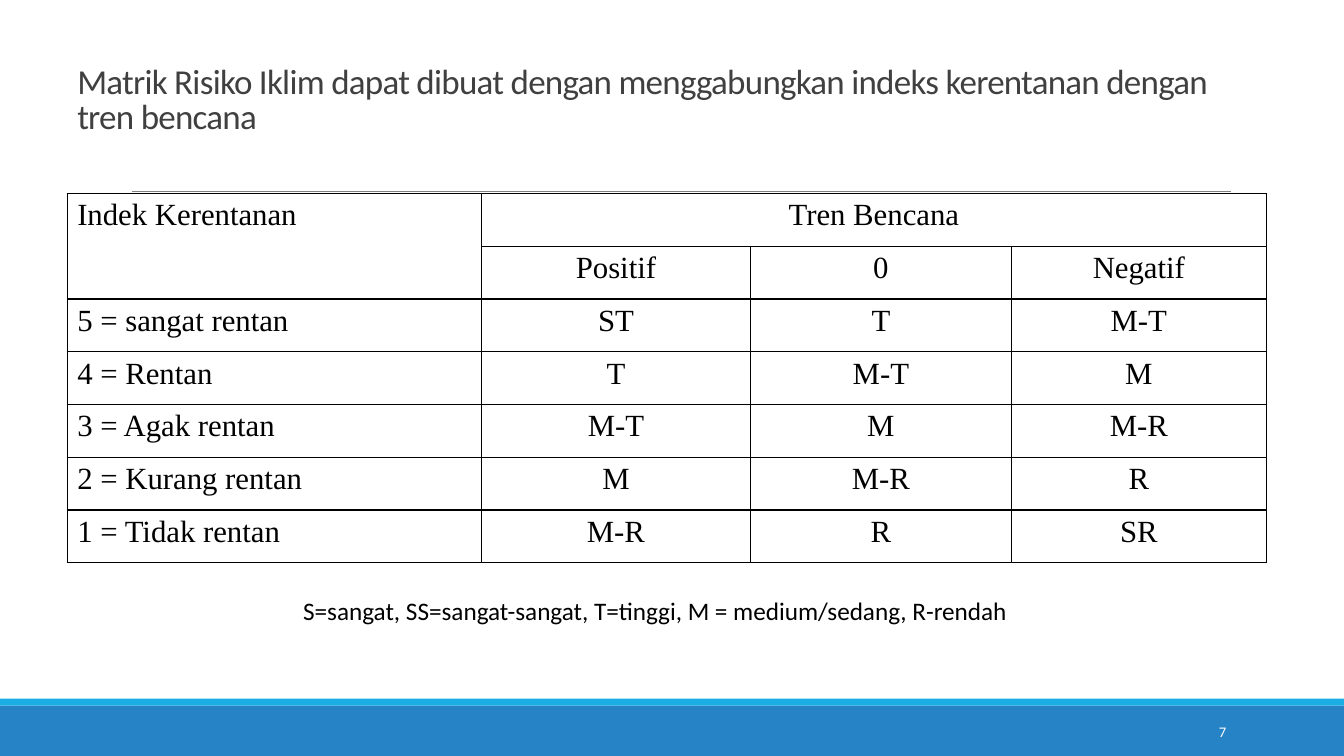
import pptx
import pptx.util
import pptx.dml.color
import pptx.enum.shapes
import pptx.enum.text
from lxml import etree

Pt = pptx.util.Pt
ALIGN = pptx.enum.text.PP_ALIGN
ANCHOR = pptx.enum.text.MSO_ANCHOR

TITLE = ("Matrik Risiko Iklim dapat dibuat dengan menggabungkan "
         "indeks kerentanan dengan tren bencana")
INDEX_HEAD = "Indek Kerentanan"
TREND_HEAD = "Tren Bencana"
TRENDS = ["Positif", "0", "Negatif"]
INDEX_LEVELS = ["5 = sangat rentan", "4 = Rentan", "3 = Agak rentan",
                "2 = Kurang rentan", "1 = Tidak rentan"]
# Risk falls one step with each row down and each column to the right.
RISKS = ["ST", "T", "M-T", "M", "M-R", "R", "SR"]
LEGEND = "S=sangat, SS=sangat-sangat, T=tinggi, M = medium/sedang, R-rendah"
PAGE = "7"

BANDS = [(504, 36, "2683C6"), (499, 5, "1CADE4")]  # top, height, colour
COL_WIDTHS = [296, 192, 186.5, 182]
ROW_HEIGHT = 37.7
SLIDE_W, SLIDE_H = 960, 540


def rgb(hex_colour):
    return pptx.dml.color.RGBColor.from_string(hex_colour)


def write(tf, text, size, font="Calibri", colour="000000", align=ALIGN.LEFT,
          anchor=ANCHOR.TOP, line_spacing=1.0, tracking=0):
    tf.word_wrap = True
    tf.vertical_anchor = anchor
    p = tf.paragraphs[0]
    p.alignment = align
    p.line_spacing = line_spacing
    r = p.add_run()
    r.text = text
    r.font.size = Pt(size)
    r.font.name = font
    r.font.color.rgb = rgb(colour)
    if tracking:
        r.font._element.set("spc", str(int(tracking * 100)))


def add_text(s, left, top, width, height, text, size, **fmt):
    box = s.shapes.add_textbox(Pt(left), Pt(top), Pt(width), Pt(height))
    write(box.text_frame, text, size, **fmt)


def add_borders(cell, colour="000000", width=1):
    """Draw all four sides; they must precede the fill in the XML."""
    tc_pr = cell._tc.get_or_add_tcPr()
    ns = pptx.oxml.ns.qn
    for i, side in enumerate(("lnL", "lnR", "lnT", "lnB")):
        ln = etree.Element(ns("a:" + side), w=str(Pt(width)))
        fill = etree.SubElement(ln, ns("a:solidFill"))
        etree.SubElement(fill, ns("a:srgbClr"), val=colour)
        tc_pr.insert(i, ln)


def add_background(s):
    for top, height, colour in BANDS:
        sp = s.shapes.add_shape(pptx.enum.shapes.MSO_SHAPE.RECTANGLE,
                                0, Pt(top), Pt(SLIDE_W), Pt(height))
        sp.shadow.inherit = False
        sp.fill.solid()
        sp.fill.fore_color.rgb = rgb(colour)
        sp.line.fill.background()
    rule = s.shapes.add_connector(pptx.enum.shapes.MSO_CONNECTOR.STRAIGHT,
                                  Pt(94.3), Pt(136.8), Pt(879), Pt(136.8))
    rule.line.color.rgb = rgb("808080")
    rule.line.width = Pt(0.5)
    etree.SubElement(rule._element.spPr, pptx.oxml.ns.qn("a:effectLst"))


def add_title(s):
    title = s.shapes.title
    title.left, title.top = Pt(48), Pt(27.4)
    title.width, title.height = Pt(864), Pt(74)
    title.text_frame.auto_size = pptx.enum.text.MSO_AUTO_SIZE.NONE
    write(title.text_frame, TITLE, 25, colour="404040", anchor=ANCHOR.BOTTOM,
          line_spacing=0.85, tracking=-0.5)


def add_risk_matrix(s):
    rows = [[INDEX_HEAD, TREND_HEAD, "", ""], [""] + TRENDS]
    rows += [[level] + RISKS[i:i + len(TRENDS)]
             for i, level in enumerate(INDEX_LEVELS)]
    frame = s.shapes.add_table(len(rows), len(COL_WIDTHS), Pt(48), Pt(138.2),
                               Pt(sum(COL_WIDTHS)), Pt(ROW_HEIGHT * len(rows)))
    table = frame.table
    table.first_row = table.horz_banding = False
    for col, width in zip(table.columns, COL_WIDTHS):
        col.width = Pt(width)
    for i, row in enumerate(rows):
        table.rows[i].height = Pt(ROW_HEIGHT)
        for j, text in enumerate(row):
            cell = table.cell(i, j)
            cell.fill.background()
            cell.margin_left = cell.margin_right = Pt(7.2)
            cell.margin_top = cell.margin_bottom = 0
            add_borders(cell)
            if text:
                write(cell.text_frame, text, 22, font="Times New Roman",
                      align=ALIGN.CENTER if j else ALIGN.LEFT,
                      line_spacing=1.15)
    table.cell(0, 0).merge(table.cell(1, 0))
    table.cell(0, 1).merge(table.cell(0, len(TRENDS)))


def main():
    prs = pptx.Presentation()
    prs.slide_width, prs.slide_height = Pt(SLIDE_W), Pt(SLIDE_H)
    s = prs.slides.add_slide(prs.slide_layouts[5])
    add_background(s)
    add_title(s)
    add_risk_matrix(s)
    add_text(s, 48, 420, 840, 30, LEGEND, 18, align=ALIGN.CENTER,
             line_spacing=Pt(23))
    add_text(s, 780, 508.3, 103, 28.8, PAGE, 10.5, colour="FFFFFF",
             align=ALIGN.RIGHT, anchor=ANCHOR.MIDDLE)
    prs.save("out.pptx")


if __name__ == "__main__":
    main()
